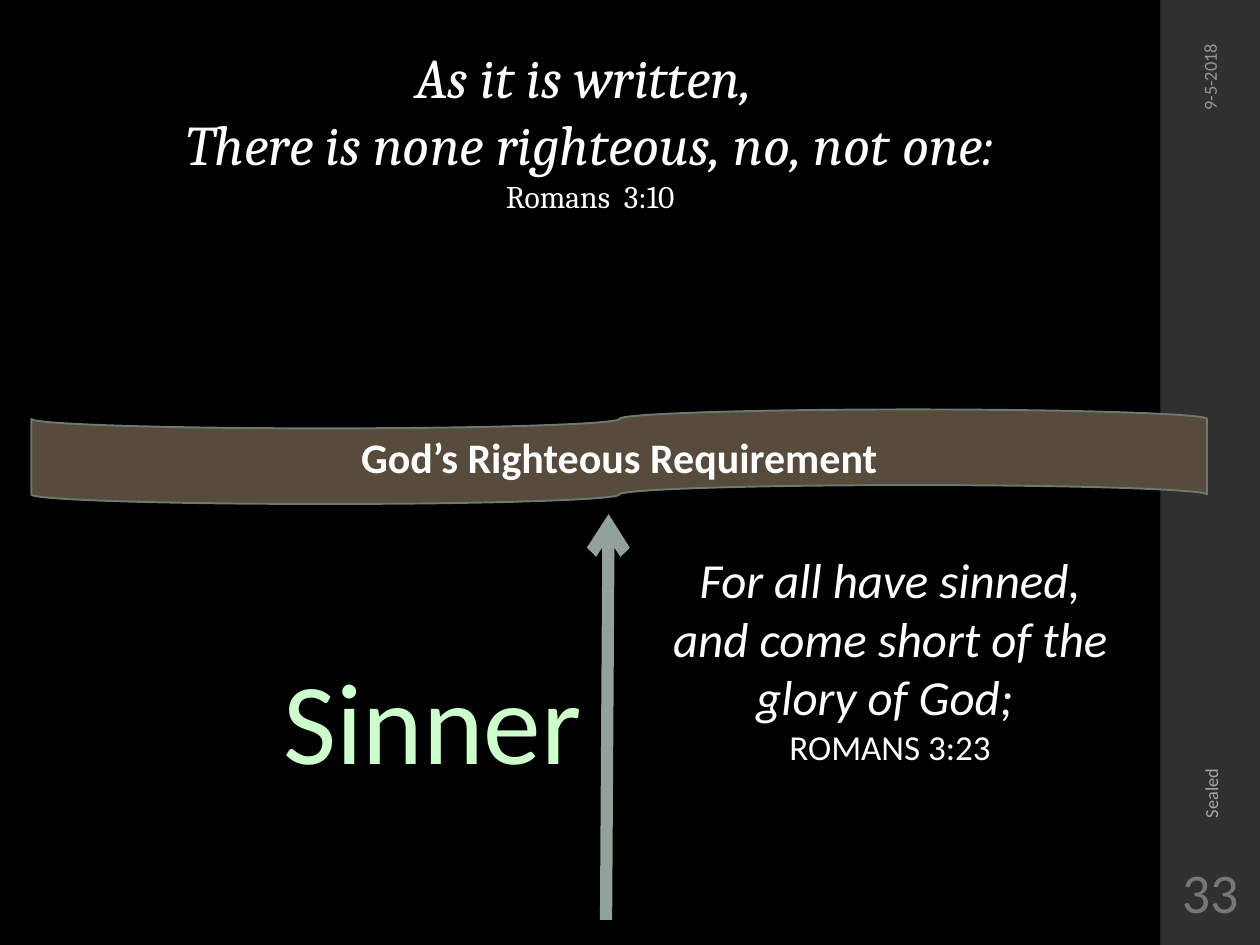
from lxml.etree import SubElement
from pptx import Presentation
from pptx.dml.color import RGBColor
from pptx.enum.shapes import MSO_CONNECTOR, MSO_SHAPE
from pptx.enum.text import MSO_ANCHOR as Anchor, PP_ALIGN as Align
from pptx.oxml.ns import qn
from pptx.util import Inches, Pt

COLORS = {
    "background": "000000",
    "sidebar": "303030",
    "banner": "564B3C",
    "banner_edge": "6D7871",
    "arrow": "93A299",
    "text": "FFFFFF",
    "sinner": "CCFFCC",
    "date": "969696",
    "footer": "A6A6A6",
    "number": "777777",
}


def color(name):
    return RGBColor.from_string(COLORS[name])


class SlideBuilder:
    body_font = "Calibri"
    verse_font = "Cambria"

    def __init__(self, page):
        self.page = page
        page.background.fill.solid()
        page.background.fill.fore_color.rgb = color("background")

    def shape(self, kind, bounds, fill, edge=None):
        shape = self.page.shapes.add_shape(kind, *map(Inches, bounds))
        shape.shadow.inherit = False
        shape.fill.solid()
        shape.fill.fore_color.rgb = color(fill)
        if edge:
            shape.line.color.rgb = color(edge)
            shape.line.width = Pt(1.1)
        else:
            shape.line.fill.background()
        return shape

    def set_lines(self, frame, lines, tint="text", font=body_font, align=Align.LEFT):
        for index, (text, size, style) in enumerate(lines):
            para = frame.add_paragraph() if index else frame.paragraphs[0]
            para.text = text
            para.alignment = align
            para.font.name = font
            para.font.size = Pt(size)
            para.font.color.rgb = color(tint)
            para.font.bold = style == "bold"
            para.font.italic = style == "italic"

    def text(self, bounds, lines, anchor=Anchor.TOP, rotation=0, wrap=True,
             side_inset=0.1, **style):
        box = self.page.shapes.add_textbox(*map(Inches, bounds))
        box.rotation = rotation
        frame = box.text_frame
        frame.word_wrap = wrap
        frame.vertical_anchor = anchor
        frame.margin_left = frame.margin_right = Inches(side_inset)
        self.set_lines(frame, lines, **style)

    def arrow(self, start, end, tint, width):
        connector = self.page.shapes.add_connector(
            MSO_CONNECTOR.STRAIGHT, *map(Inches, start + end))
        connector.line.color.rgb = color(tint)
        connector.line.width = Pt(width)
        properties = connector.element.spPr
        SubElement(properties.find(qn("a:ln")), qn("a:tailEnd"), type="arrow")
        SubElement(properties, qn("a:effectLst"))


def main():
    deck = Presentation()
    deck.slide_width, deck.slide_height = Inches(10), Inches(7.5)
    slide = SlideBuilder(deck.slides.add_slide(deck.slide_layouts[6]))

    slide.shape(MSO_SHAPE.RECTANGLE, (9.21, 0, 0.8, 7.5), "sidebar")
    banner = slide.shape(MSO_SHAPE.FLOWCHART_PUNCHED_TAPE,
                         (0.25, 3.25, 9.33, 0.75), "banner", "banner_edge")
    banner.text_frame.vertical_anchor = Anchor.MIDDLE
    slide.set_lines(banner.text_frame, [("God’s Righteous Requirement", 24, "bold")],
                    align=Align.CENTER)

    slide.text((2.15, 5.1, 2.6, 1.21), [("Sinner", 66, "plain")],
               wrap=False, tint="sinner")
    slide.arrow((4.81, 7.3), (4.83, 4.08), "arrow", 7)
    slide.text((0.37, 0.29, 8.63, 1.85), [
        ("As it is written, ", 32, "italic"),
        ("There is none righteous, no, not one:", 32, "italic"),
        ("Romans  3:10", 18, "plain"),
    ], font=slide.verse_font, align=Align.CENTER)
    slide.text((5.15, 4.31, 3.83, 2.32), [
        ("For all have sinned, and come short of the glory of God; ", 28, "italic"),
        ("ROMANS 3:23", 20, "plain"),
    ], align=Align.CENTER)

    slide.text((8.56, 1.14, 2.08, 0.3), [("9-5-2018", 10.5, "plain")],
               anchor=Anchor.MIDDLE, rotation=270, tint="date", align=Align.RIGHT)
    slide.text((7.65, 4.48, 3.92, 0.3), [("Sealed", 10.5, "plain")],
               anchor=Anchor.MIDDLE, rotation=270, tint="footer")
    slide.text((9.23, 6.75, 0.75, 0.65), [("33", 32, "plain")],
               anchor=Anchor.MIDDLE, side_inset=0.03, tint="number",
               align=Align.CENTER)
    deck.save("out.pptx")


if __name__ == "__main__":
    main()
